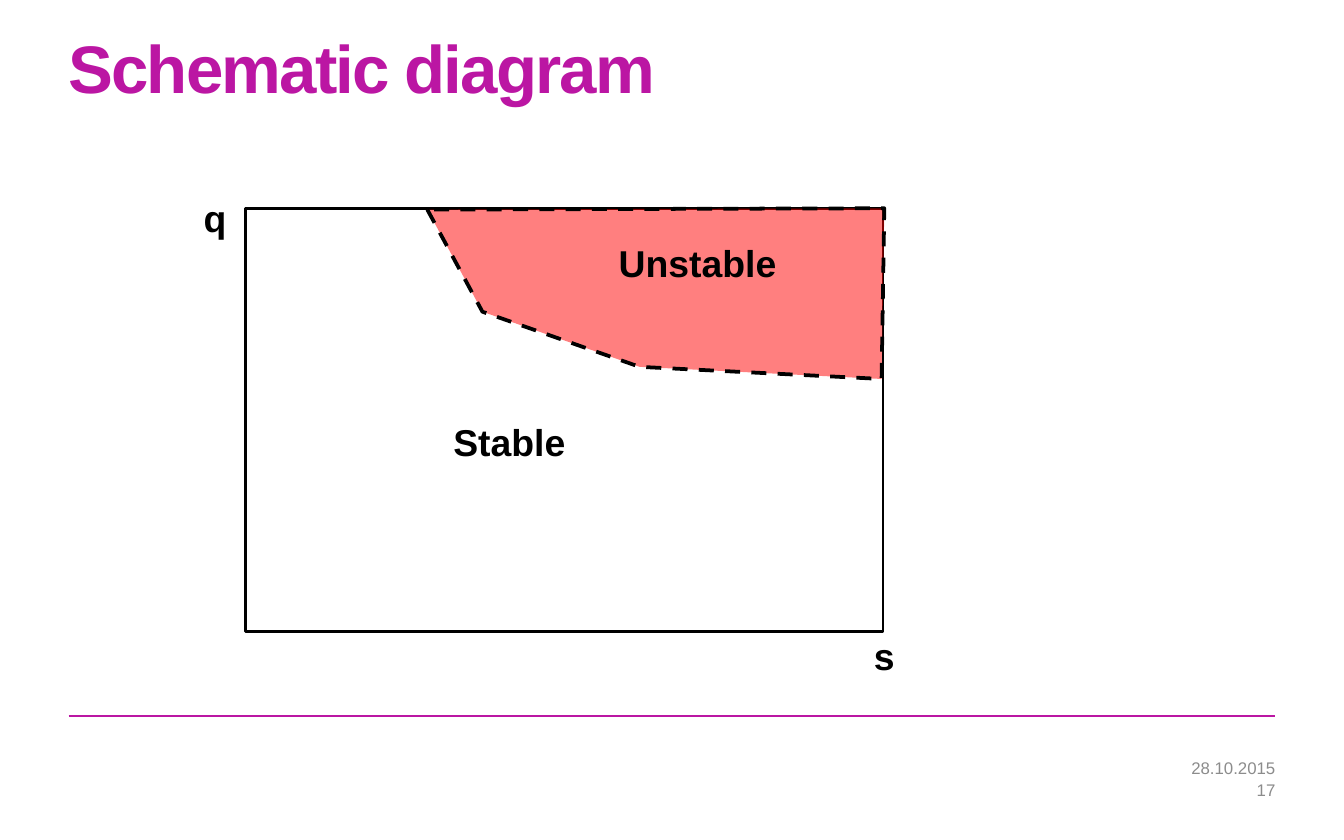
"""Build a slide with a schematic stability diagram in the s-q plane."""
from dataclasses import dataclass

from lxml import etree
from pptx import Presentation
from pptx.dml.color import RGBColor
from pptx.enum.dml import MSO_LINE
from pptx.enum.shapes import MSO_CONNECTOR, MSO_SHAPE
from pptx.enum.text import MSO_ANCHOR, MSO_AUTO_SIZE, PP_ALIGN
from pptx.oxml.ns import qn
from pptx.util import Inches, Pt

DASH = MSO_LINE.DASH
STRAIGHT = MSO_CONNECTOR.STRAIGHT
RECTANGLE = MSO_SHAPE.RECTANGLE
TOP, MIDDLE = MSO_ANCHOR.TOP, MSO_ANCHOR.MIDDLE
NO_FIT = MSO_AUTO_SIZE.NONE
LEFT, CENTER, RIGHT = PP_ALIGN.LEFT, PP_ALIGN.CENTER, PP_ALIGN.RIGHT

SLIDE_WIDTH, SLIDE_HEIGHT = Inches(10), Inches(6.25)
GRID_COLUMNS = 100
CELL = SLIDE_WIDTH / GRID_COLUMNS


@dataclass(frozen=True)
class Theme:
    """Colours, font and type sizes of the slide."""
    accent: str = "BB16A3"
    ink: str = "000000"
    muted: str = "8C8C8C"
    unstable: str = "FF0000"
    font: str = "Arial"
    title_size: int = 36
    label_size: int = 20
    footer_size: int = 9


@dataclass(frozen=True)
class Box:
    """A rectangle in grid columns and rows."""
    column: float
    row: float
    columns: float
    rows: float

    def place(self) -> tuple[int, int, int, int]:
        """Return left, top, width and height as slide lengths."""
        return tuple(grid(n) for n in (self.column, self.row, self.columns, self.rows))


@dataclass(frozen=True)
class Label:
    """A text with its place."""
    text: str
    box: Box


THEME = Theme()
MARGIN = 5.1
CONTENT_WIDTH = GRID_COLUMNS - 2 * MARGIN
RULE_ROW = 53.3
TITLE = Label("Schematic diagram", Box(MARGIN, 2.9, CONTENT_WIDTH, 10.9))
PLANE = Box(18.3, 15.5, 47.4, 31.5)
UNSTABLE_REGION = ((31.8, 15.6), (35.9, 23.2), (47.6, 27.3), (65.6, 28.2), (65.8, 15.5))
LABELS = (
    Label("Unstable", Box(42, 17.9, 19.8, 3.4)),
    Label("Stable", Box(28, 31.2, 19.8, 3.4)),
    Label("s", Box(63, 47.1, 5.6, 3.4)),
    Label("q", Box(13.2, 14.5, 5.6, 3.4)),
)
FOOTERS = (
    Label("28.10.2015", Box(55.3, 56.3, 39.6, 1.7)),
    Label("17", Box(55.3, 58, 39.6, 1.5)),
)


def grid(cells: float) -> int:
    """Convert grid cells to a slide length."""
    return round(cells * CELL)


def color(value: str) -> RGBColor:
    """Convert a hexadecimal colour."""
    return RGBColor.from_string(value)


def write_text(shape, text: str, *, size: int, ink: str, bold: bool = False,
               align=LEFT, anchor=TOP, line_spacing: float = 1.0, tracking: float = 0) -> None:
    """Write one formatted paragraph into a shape without insets."""
    frame = shape.text_frame
    frame.auto_size = NO_FIT
    frame.word_wrap = True
    frame.vertical_anchor = anchor
    frame.margin_left = frame.margin_top = frame.margin_right = frame.margin_bottom = 0
    paragraph = frame.paragraphs[0]
    paragraph.alignment = align
    paragraph.line_spacing = line_spacing
    run = paragraph.add_run()
    run.text = text
    run.font.name = THEME.font
    run.font.size = Pt(size)
    run.font.bold = bold
    run.font.color.rgb = color(ink)
    if tracking:
        run.font._element.set("spc", str(round(tracking * 100)))


def add_label(slide, label: Label, **text_format) -> None:
    """Add a text box for a label."""
    write_text(slide.shapes.add_textbox(*label.box.place()), label.text, **text_format)


def add_title(slide, label: Label) -> None:
    """Move and fill the title placeholder."""
    title = slide.shapes.title
    title.left, title.top, title.width, title.height = label.box.place()
    write_text(title, label.text, size=THEME.title_size, ink=THEME.accent, bold=True,
               line_spacing=0.85, tracking=-1)


def style_line(line, ink: str, width: float) -> None:
    """Set the colour and width of a line."""
    line.color.rgb = color(ink)
    line.width = Pt(width)


def add_rule(slide) -> None:
    """Draw the line above the footer."""
    row = grid(RULE_ROW)
    rule = slide.shapes.add_connector(
        STRAIGHT, grid(MARGIN), row, grid(MARGIN + CONTENT_WIDTH), row)
    style_line(rule.line, THEME.accent, 1)
    etree.SubElement(rule._element.spPr, qn("a:effectLst"))


def add_plane(slide) -> None:
    """Draw the frame of the s-q plane."""
    plane = slide.shapes.add_shape(RECTANGLE, *PLANE.place())
    plane.shadow.inherit = False
    plane.fill.background()
    style_line(plane.line, THEME.ink, 1.5)


def add_unstable_region(slide) -> None:
    """Draw the half-transparent unstable region with a dashed edge."""
    start, *corners = [(grid(column), grid(row)) for column, row in UNSTABLE_REGION]
    builder = slide.shapes.build_freeform(*start)
    builder.add_line_segments(corners, close=True)
    region = builder.convert_to_shape()
    region.shadow.inherit = False
    region.fill.solid()
    region.fill.fore_color.rgb = color(THEME.unstable)
    fill_color = region._element.spPr.find(qn("a:solidFill")).find(qn("a:srgbClr"))
    etree.SubElement(fill_color, qn("a:alpha")).set("val", "50000")
    style_line(region.line, THEME.ink, 2)
    region.line.dash_style = DASH


def main() -> None:
    """Build and save the presentation."""
    presentation = Presentation()
    presentation.slide_width, presentation.slide_height = SLIDE_WIDTH, SLIDE_HEIGHT
    slide = presentation.slides.add_slide(presentation.slide_layouts.get_by_name("Title Only"))
    add_rule(slide)
    add_title(slide, TITLE)
    for footer in FOOTERS:
        add_label(slide, footer, size=THEME.footer_size, ink=THEME.muted,
                  align=RIGHT, anchor=MIDDLE)
    add_plane(slide)
    add_unstable_region(slide)
    for label in LABELS:
        add_label(slide, label, size=THEME.label_size, ink=THEME.ink, bold=True, align=CENTER)
    presentation.save("out.pptx")


if __name__ == "__main__":
    main()
